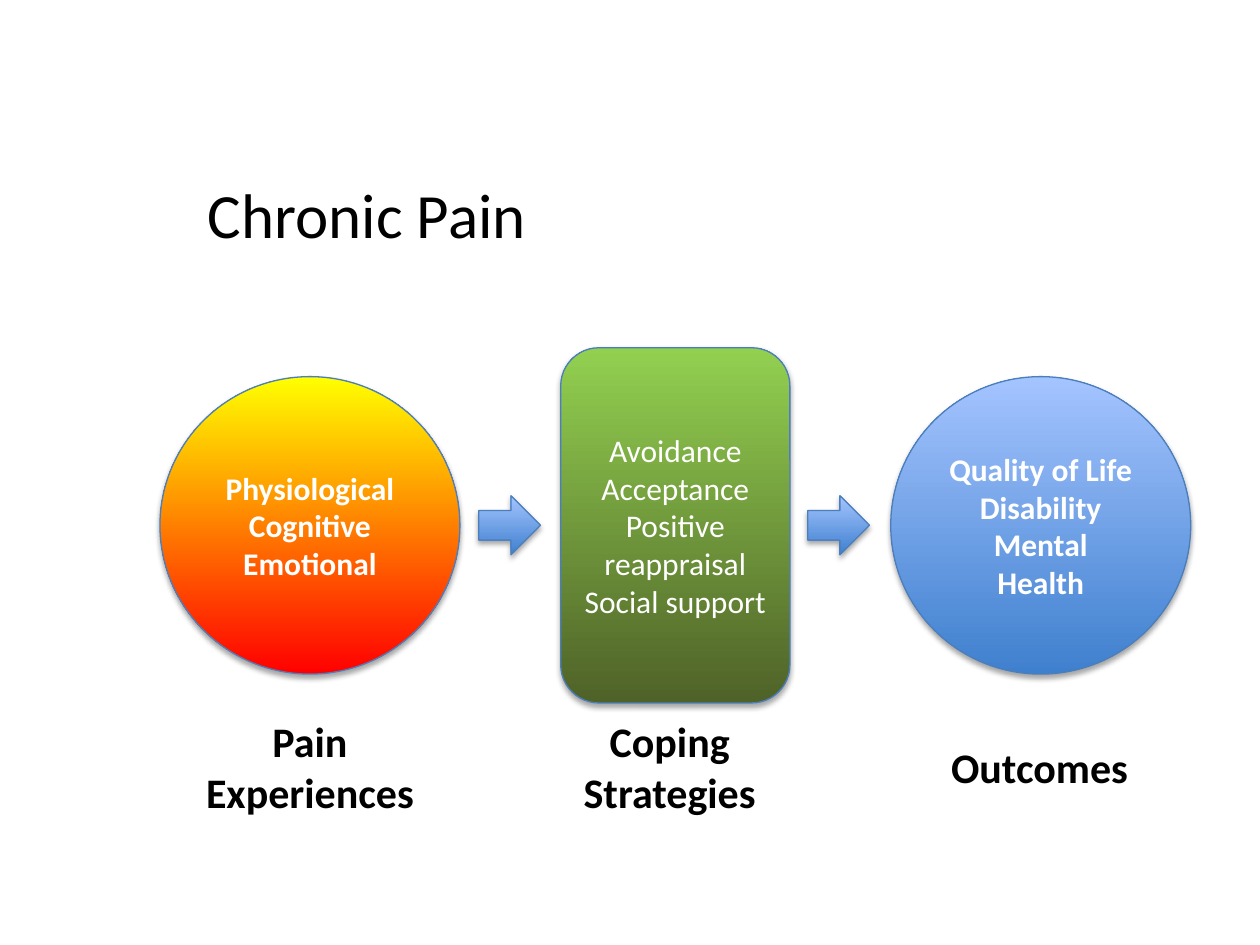
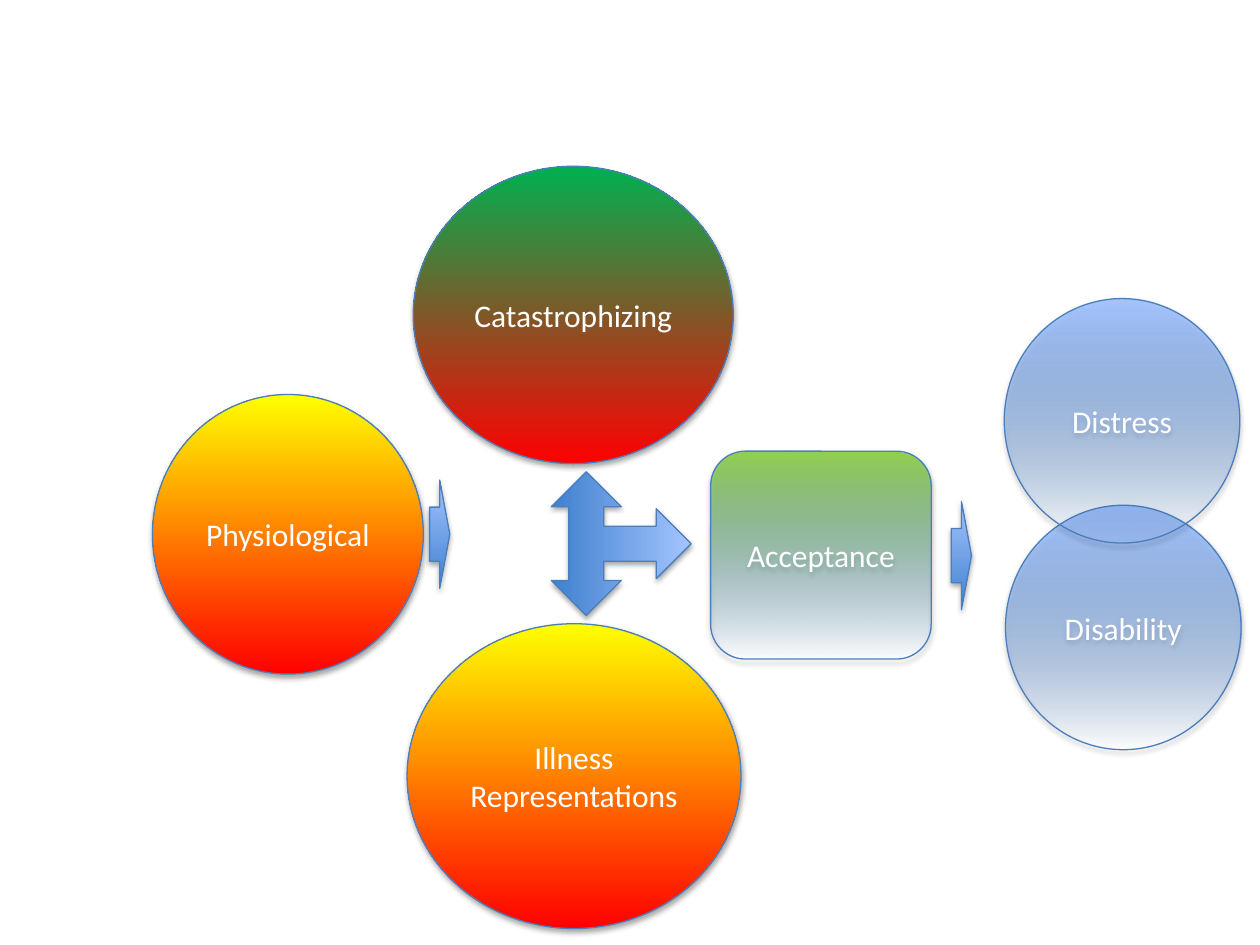
from lxml import etree
from pptx import Presentation
from pptx.dml.color import RGBColor
from pptx.enum import shapes, text
from pptx.oxml import ns, parse_xml
from pptx.util import Pt

# Shared colours
BLACK = RGBColor(0x00, 0x00, 0x00)
WHITE = RGBColor(0xFF, 0xFF, 0xFF)
RED = RGBColor(0xFF, 0x00, 0x00)
YELLOW = RGBColor(0xFF, 0xFF, 0x00)
GREEN = RGBColor(0x00, 0xB0, 0x50)
LIME = RGBColor(0x92, 0xD0, 0x50)
OLIVE = RGBColor(0x4F, 0x62, 0x28)
BLUE = RGBColor(0x3F, 0x80, 0xCE)
SKY = RGBColor(0xA4, 0xC4, 0xFF)
OUTLINE = RGBColor(0x4B, 0x7E, 0xBC)

# Gradients run from the bottom colour to the top colour
FIRE = (RED, YELLOW)
MOSS = (OLIVE, LIME)
ALARM = (RED, GREEN)
WATER = (BLUE, SKY)
MEADOW = (BLUE, LIME)

# Shared text formats
TITLE = {"name": "Calibri", "size": Pt(36), "bold": False}
LABEL = {"name": "Calibri", "size": Pt(24), "bold": True}
PLAIN = {"name": "Calibri", "size": Pt(18), "bold": False}
STRONG = {**PLAIN, "bold": True}

SHADOW = (
    f'<a:effectLst {ns.nsdecls("a")}>'
    f'<a:outerShdw blurRad="{Pt(3.1)}" dist="{Pt(1.8)}" dir="5400000" rotWithShape="0">'
    '<a:srgbClr val="000000"><a:alpha val="35000"/></a:srgbClr>'
    '</a:outerShdw></a:effectLst>'
)

CIRCLE = shapes.MSO_SHAPE.OVAL
CARD = shapes.MSO_SHAPE.ROUNDED_RECTANGLE
ARROW = shapes.MSO_SHAPE.RIGHT_ARROW
FORK = shapes.MSO_SHAPE.LEFT_RIGHT_UP_ARROW


def write(frame, lines, formats, colour, align=text.PP_ALIGN.CENTER):
    frame.word_wrap = True
    for index, line in enumerate(lines):
        para = frame.paragraphs[0] if index == 0 else frame.add_paragraph()
        para.alignment = align
        span = para.add_run()
        span.text = line
        for name, value in formats.items():
            setattr(span.font, name, value)
        span.font.color.rgb = colour


def draw(page, kind, x, y, width, height, gradient, lines=(), formats=PLAIN, fades=False):
    """Add a shaded shape centred on x, y; a fading one is clear at the bottom."""
    shape = page.shapes.add_shape(
        kind, Pt(x - width / 2), Pt(y - height / 2), Pt(width), Pt(height))
    shape.fill.gradient()
    shape.fill.gradient_angle = 90
    for stop, colour, position in zip(shape.fill.gradient_stops, gradient, (0, 1)):
        stop.color.rgb = colour
        stop.position = position
    properties = shape.element.spPr
    if fades:
        bottom = properties.find(".//" + ns.qn("a:srgbClr"))
        etree.SubElement(bottom, ns.qn("a:alpha")).set("val", "0")
    shape.line.color.rgb = OUTLINE
    shape.line.width = Pt(0.75)
    properties.append(parse_xml(SHADOW))
    shape.text_frame.vertical_anchor = text.MSO_ANCHOR.MIDDLE
    write(shape.text_frame, lines, formats, WHITE)
    return shape


deck = Presentation()
deck.slide_width, deck.slide_height = Pt(720), Pt(540)

# Slide 1: from pain to outcomes
page = deck.slides.add_slide(deck.slide_layouts[5])
title = page.shapes.title
title.left, title.top, title.width, title.height = Pt(111.6), Pt(77), Pt(572.4), Pt(90)
title.text_frame.vertical_anchor = text.MSO_ANCHOR.MIDDLE
write(title.text_frame, ["Chronic Pain"], TITLE, BLACK, text.PP_ALIGN.LEFT)

ROW = 300.2
stages = [
    (CIRCLE, 177.1, 171.4, 170, FIRE, ["Physiological", "Cognitive", "Emotional"], STRONG),
    (CIRCLE, 594.7, 171.4, 170, WATER,
     ["Quality of Life", "Disability", "Mental Health"], STRONG),
    (CARD, 385.9, 131, 203, MOSS,
     ["Avoidance", "Acceptance", "Positive reappraisal", "Social support"], PLAIN),
    (ARROW, 291.2, 35.3, 33.8, WATER, [], PLAIN),
    (ARROW, 479.2, 35.3, 33.8, WATER, [], PLAIN),
]
for kind, x, width, height, gradient, lines, formats in stages:
    draw(page, kind, x, ROW, width, height, gradient, lines, formats)

# Stage labels
LABEL_ROW = 438.3
labels = [
    ("Pain Experiences", 177.1, 164.2, 65.5),
    ("Outcomes", 594, 135.4, 36),
    ("Coping Strategies", 382.7, 124.6, 65.5),
]
for words, x, width, height in labels:
    box = page.shapes.add_textbox(
        Pt(x - width / 2), Pt(LABEL_ROW - height / 2), Pt(width), Pt(height))
    write(box.text_frame, [words], LABEL, BLACK)
    box.text_frame.auto_size = text.MSO_AUTO_SIZE.SHAPE_TO_FIT_TEXT

# Slide 2: the acceptance model
page = deck.slides.add_slide(deck.slide_layouts[6])
factors = [
    (CIRCLE, 164.5, 305.3, 154.8, 159.8, FIRE, "Physiological", False),
    (CIRCLE, 328, 443.5, 190.8, 174.2, FIRE, "Illness Representations", False),
    (CARD, 469.1, 317.2, 126, 118.8, MEADOW, "Acceptance", True),
    (CIRCLE, 641.9, 358.6, 134.6, 139.7, WATER, "Disability", True),
    (CIRCLE, 641.2, 240.5, 134.6, 139.7, WATER, "Distress", True),
    (CIRCLE, 327.6, 180, 182.9, 169.9, ALARM, "Catastrophizing", False),
]
for kind, x, y, width, height, gradient, words, fades in factors:
    draw(page, kind, x, y, width, height, gradient, [words], fades=fades)

# Arrows between the factors
for x, y in [(251.3, 305.3), (549.4, 317.5)]:
    draw(page, ARROW, x, y, 11.5, 61.9, WATER)
fork = draw(page, FORK, 355, 310.7, 82.1, 79.9, WATER)
fork.rotation = 90

deck.save("out.pptx")
